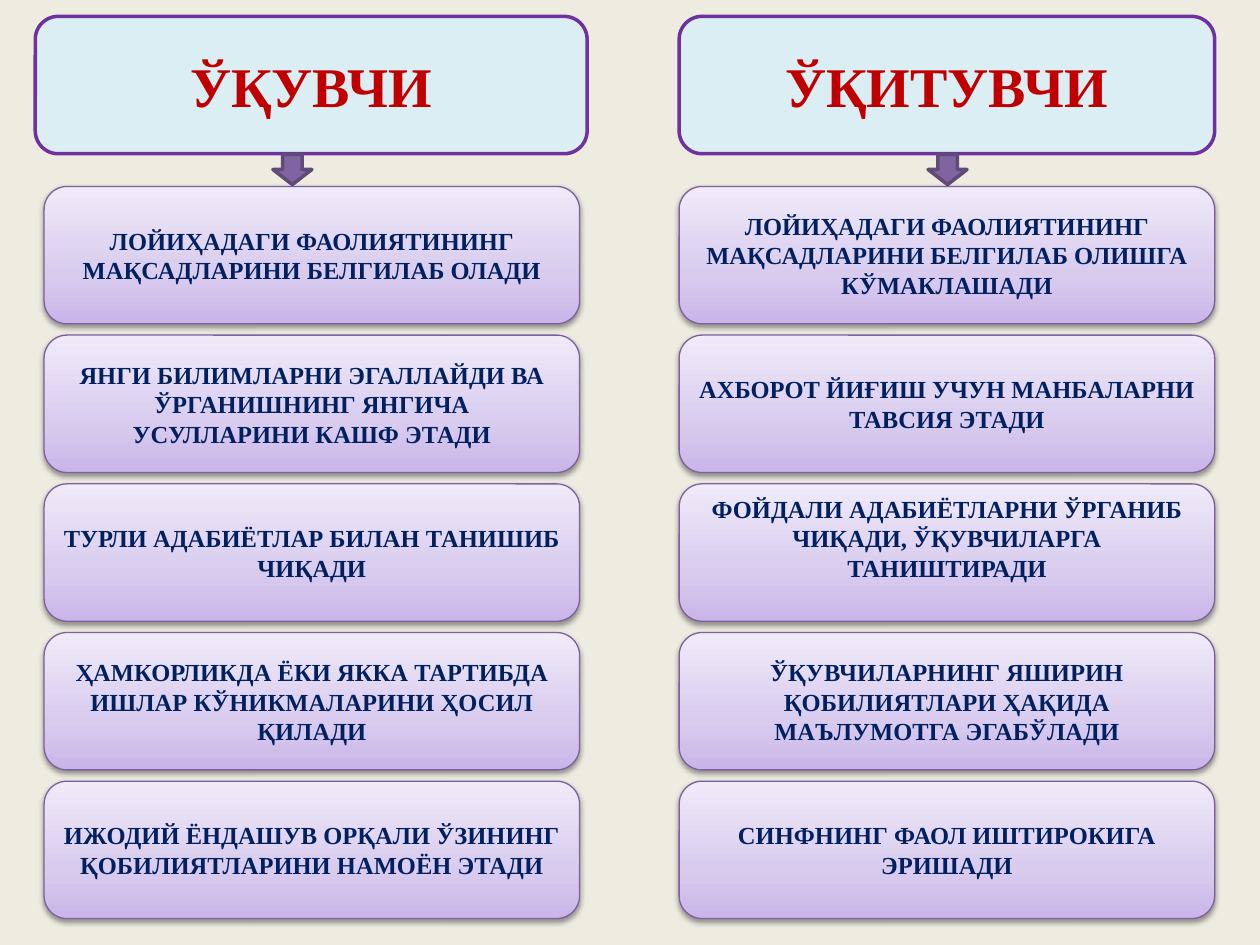
import copy

import pptx
import pptx.dml.color
import pptx.enum.shapes
import pptx.enum.text
import pptx.oxml
import pptx.oxml.ns
import pptx.util

Inches = pptx.util.Inches
Shapes = pptx.enum.shapes.MSO_SHAPE
CARD_GRADIENT = [(0, "C9B5E8"), (0.35, "D8CBEE"), (1, "F0EAF9")]
CARD_SHADOW = (
    f'<a:outerShdw {pptx.oxml.ns.nsdecls("a")} blurRad="40000" dist="20000" dir="5400000" rotWithShape="0">'
    '<a:srgbClr val="000000"><a:alpha val="38000"/></a:srgbClr></a:outerShdw>'
)


def rgb(value):
    return pptx.dml.color.RGBColor.from_string(value)


def add_box(text, left, top, width, height, kind=Shapes.ROUNDED_RECTANGLE, fill=None,
            line="7D60A0", line_width=0.75, size=14, color="002060"):
    """Add an outlined shape with centred bold text; without a fill colour it is left for a gradient."""
    shape = slide.shapes.add_shape(kind, Inches(left), Inches(top), Inches(width), Inches(height))
    shape.shadow.inherit = False
    if fill:
        shape.fill.solid()
        shape.fill.fore_color.rgb = rgb(fill)
    shape.line.color.rgb = rgb(line)
    shape.line.width = pptx.util.Pt(line_width)
    if text:
        frame = shape.text_frame
        frame.word_wrap = True
        frame.vertical_anchor = pptx.enum.text.MSO_ANCHOR.MIDDLE
        paragraph = frame.paragraphs[0]
        paragraph.alignment = pptx.enum.text.PP_ALIGN.CENTER
        run = paragraph.add_run()
        run.text = text
        run.font.name = "Times New Roman"
        run.font.size = pptx.util.Pt(size)
        run.font.bold = True
        run.font.color.rgb = rgb(color)
    return shape


presentation = pptx.Presentation()
presentation.slide_width = Inches(10)
presentation.slide_height = Inches(7.5)
slide = presentation.slides.add_slide(presentation.slide_layouts[6])
slide.background.fill.solid()
slide.background.fill.fore_color.rgb = rgb("EEECE1")

# heading, heading left, heading width, card left, arrow left, cards
columns = [
    ("ЎҚУВЧИ", 0.28, 4.38, 0.35, 2.2, [
        "ЛОЙИҲАДАГИ ФАОЛИЯТИНИНГ МАҚСАДЛАРИНИ БЕЛГИЛАБ ОЛАДИ",
        "ЯНГИ БИЛИМЛАРНИ ЭГАЛЛАЙДИ ВА ЎРГАНИШНИНГ ЯНГИЧА УСУЛЛАРИНИ КАШФ ЭТАДИ",
        "ТУРЛИ АДАБИЁТЛАР БИЛАН ТАНИШИБ ЧИҚАДИ",
        "ҲАМКОРЛИКДА ЁКИ ЯККА ТАРТИБДА ИШЛАР КЎНИКМАЛАРИНИ ҲОСИЛ ҚИЛАДИ",
        "ИЖОДИЙ ЁНДАШУВ ОРҚАЛИ ЎЗИНИНГ ҚОБИЛИЯТЛАРИНИ НАМОЁН ЭТАДИ",
    ]),
    ("ЎҚИТУВЧИ", 5.39, 4.25, 5.39, 7.4, [
        "ЛОЙИҲАДАГИ ФАОЛИЯТИНИНГ МАҚСАДЛАРИНИ БЕЛГИЛАБ ОЛИШГА КЎМАКЛАШАДИ",
        "АХБОРОТ ЙИҒИШ УЧУН МАНБАЛАРНИ ТАВСИЯ ЭТАДИ",
        "ФОЙДАЛИ АДАБИЁТЛАРНИ ЎРГАНИБ ЧИҚАДИ, ЎҚУВЧИЛАРГА ТАНИШТИРАДИ",
        "ЎҚУВЧИЛАРНИНГ ЯШИРИН ҚОБИЛИЯТЛАРИ ҲАҚИДА МАЪЛУМОТГА ЭГАБЎЛАДИ",
        "СИНФНИНГ ФАОЛ ИШТИРОКИГА ЭРИШАДИ",
    ]),
]

for heading, heading_left, heading_width, card_left, arrow_left, cards in columns:
    add_box(heading, heading_left, 0.13, heading_width, 1.09, fill="DBEEF4",
            line="7030A0", line_width=2, size=32, color="C00000")

    for row, text in enumerate(cards):
        card = add_box(text, card_left, 1.48 + 1.18 * row, 4.25, 1.09)
        card.fill.gradient()
        card.fill.gradient_angle = 90
        properties = card._element.spPr
        first_stop = properties.find(".//" + pptx.oxml.ns.qn("a:gs"))
        first_stop.addnext(copy.deepcopy(first_stop))
        for stop, (position, color) in zip(card.fill.gradient_stops, CARD_GRADIENT):
            stop.position = position
            stop.color.rgb = rgb(color)
        effects = properties.find(pptx.oxml.ns.qn("a:effectLst"))
        effects.append(pptx.oxml.parse_xml(CARD_SHADOW))
        if text.startswith("ФОЙДАЛИ"):
            card.text_frame.margin_bottom = Inches(0.28)  # this text sits above the middle

    arrow = add_box("", arrow_left, 1.19, 0.24, 0.31, kind=Shapes.RIGHT_ARROW,
                    fill="8064A2", line="5F4A78", line_width=2)
    arrow.rotation = 90

presentation.save("out.pptx")
